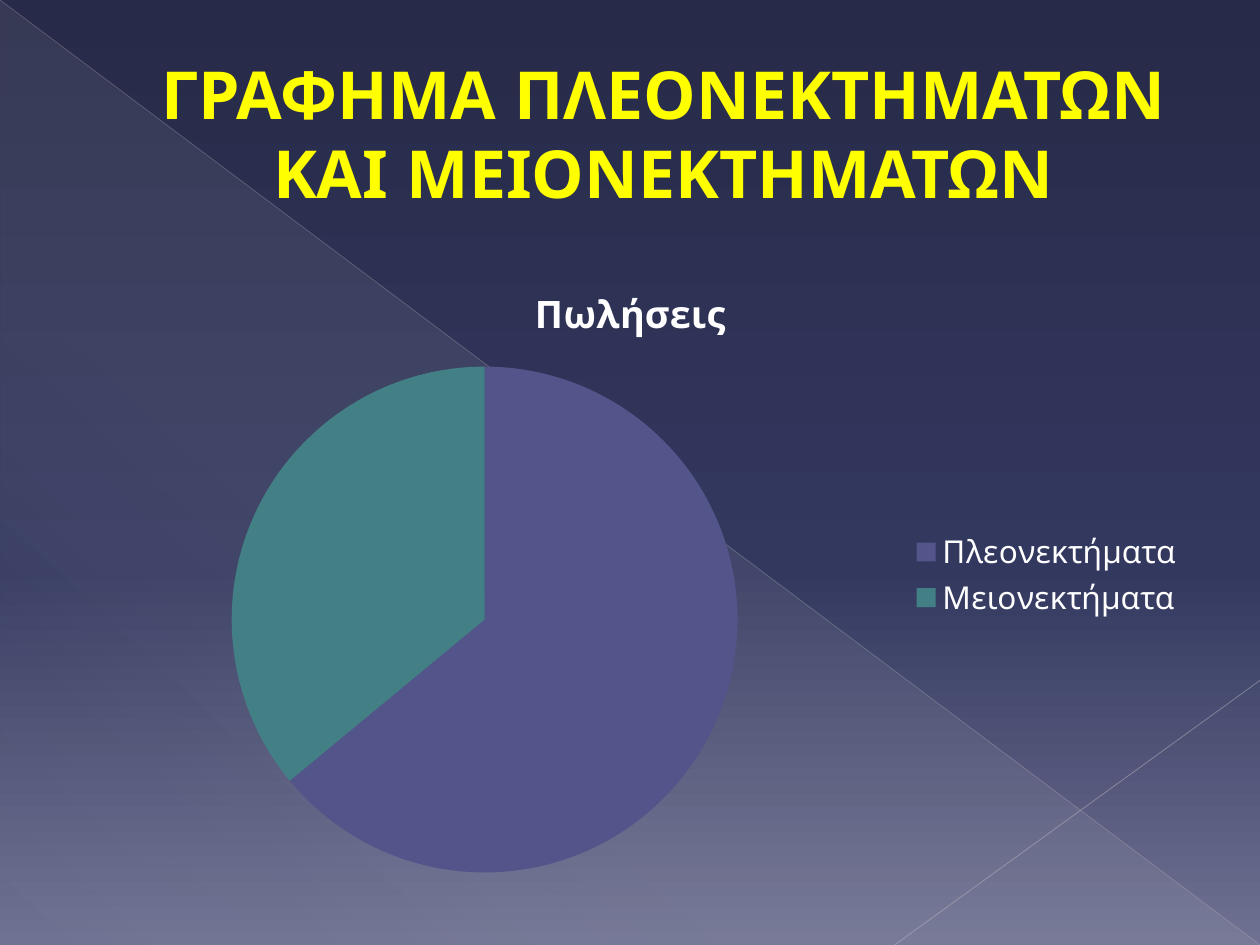
from dataclasses import dataclass

import lxml.etree
import pptx
import pptx.chart.data
import pptx.dml.color
import pptx.enum.chart
import pptx.enum.shapes
import pptx.enum.text
import pptx.oxml
import pptx.oxml.ns
import pptx.util

RGBColor = pptx.dml.color.RGBColor
WIDTH, HEIGHT = pptx.util.Inches(10), pptx.util.Inches(7.5)
FONT = "Quicksand"

NIGHT = RGBColor(0x27, 0x2A, 0x48)
INDIGO = RGBColor(0x33, 0x38, 0x5F)
HAZE = RGBColor(0x6E, 0x71, 0x91)
MIST = RGBColor(0xDE, 0xDE, 0xDE)
LONG_RAY = RGBColor(0xB7, 0xB7, 0xBE)
SHORT_RAY = RGBColor(0xBF, 0xBF, 0xC5)
YELLOW = RGBColor(0xFF, 0xFF, 0x00)
OUTLINE = RGBColor(0x3A, 0x3A, 0x60)
WHITE = RGBColor(0xFF, 0xFF, 0xFF)
PURPLE = RGBColor(0x53, 0x54, 0x8A)
TEAL = RGBColor(0x43, 0x80, 0x86)


@dataclass(frozen=True)
class Stop:
    position: int
    color: RGBColor
    opacity: int = 100


@dataclass(frozen=True)
class Ray:
    """A thin line; its ends are shares of the slide's size."""
    start: tuple[float, float]
    end: tuple[float, float]
    color: RGBColor
    points: float
    opacity: int


@dataclass(frozen=True)
class Slice:
    label: str
    value: int
    color: RGBColor


RAYS = (
    Ray((0, 0), (1, 1), LONG_RAY, 0.39, 35),
    Ray((1, 0.72), (0.71, 1), SHORT_RAY, 0.47, 45),
)
SLICES = (Slice("Πλεονεκτήματα", 64, PURPLE), Slice("Μειονεκτήματα", 36, TEAL))


def share(x: float, y: float) -> tuple[int, int]:
    return int(WIDTH * x), int(HEIGHT * y)


def set_opacity(color_node, percent: int) -> None:
    alpha = lxml.etree.SubElement(color_node, pptx.oxml.ns.qn("a:alpha"))
    alpha.set("val", str(percent * 1000))


def apply_gradient(solid_fill, stops: tuple[Stop, ...], angle: int) -> None:
    """Replace a solid fill element by a linear gradient."""
    marks = "".join(
        f'<a:gs pos="{stop.position * 1000}"><a:srgbClr val="{stop.color}">'
        f'<a:alpha val="{stop.opacity * 1000}"/></a:srgbClr></a:gs>'
        for stop in stops)
    gradient = pptx.oxml.parse_xml(
        f'<a:gradFill {pptx.oxml.ns.nsdecls("a")} rotWithShape="1">'
        f'<a:gsLst>{marks}</a:gsLst>'
        f'<a:lin ang="{angle * 60000}" scaled="0"/></a:gradFill>')
    solid_fill.getparent().replace(solid_fill, gradient)


def draw_backdrop(page) -> None:
    page.background.fill.solid()
    apply_gradient(page.element.xpath(".//p:bgPr/a:solidFill")[0],
                   (Stop(0, NIGHT), Stop(60, INDIGO), Stop(100, HAZE)), 90)
    triangle = page.shapes.add_shape(
        pptx.enum.shapes.MSO_SHAPE.RIGHT_TRIANGLE, 0, 0, WIDTH, HEIGHT)
    triangle.shadow.inherit = False
    triangle.line.fill.background()
    triangle.fill.solid()
    apply_gradient(triangle.element.xpath("./p:spPr/a:solidFill")[0],
                   (Stop(0, MIST, 10), Stop(70, MIST, 8), Stop(100, MIST, 1)), 133)


def draw_ray(page, ray: Ray) -> None:
    line = page.shapes.add_connector(
        pptx.enum.shapes.MSO_CONNECTOR.STRAIGHT, *share(*ray.start), *share(*ray.end))
    line.line.color.rgb = ray.color
    line.line.width = pptx.util.Pt(ray.points)
    set_opacity(line.element.xpath(".//a:ln//a:srgbClr")[0], ray.opacity)
    properties = line.element.xpath("./p:spPr")[0]
    lxml.etree.SubElement(properties, pptx.oxml.ns.qn("a:effectLst"))


def style_font(font, points: float, color: RGBColor, bold: bool = False) -> None:
    font.name = FONT
    font.size = pptx.util.Pt(points)
    font.bold = bold
    font.color.rgb = color


def draw_heading(page, text: str) -> None:
    box = page.shapes.add_textbox(*share(0.05, 0.04), *share(0.9, 0.2))
    frame = box.text_frame
    frame.word_wrap = True
    frame.vertical_anchor = pptx.enum.text.MSO_ANCHOR.MIDDLE
    para = frame.paragraphs[0]
    para.alignment = pptx.enum.text.PP_ALIGN.CENTER
    margin = para._p.get_or_add_pPr()
    margin.set("marL", str(pptx.util.Inches(0.53)))
    margin.set("indent", "0")
    run = para.add_run()
    run.text = text
    style_font(run.font, 37.8, YELLOW, bold=True)
    # Thin outline around the letters
    run.font._element.insert(0, pptx.oxml.parse_xml(
        f'<a:ln {pptx.oxml.ns.nsdecls("a")} w="{pptx.util.Pt(0.5)}">'
        f'<a:solidFill><a:srgbClr val="{OUTLINE}"/></a:solidFill></a:ln>'))


def draw_pie(page, title: str, slices: tuple[Slice, ...]) -> None:
    data = pptx.chart.data.CategoryChartData()
    data.categories = [part.label for part in slices]
    data.add_series(title, [part.value for part in slices])
    chart = page.shapes.add_chart(
        pptx.enum.chart.XL_CHART_TYPE.PIE,
        *share(0.05, 0.275), *share(0.9, 2 / 3), data).chart
    style_font(chart.font, 18, WHITE)

    chart.has_title = True
    run = chart.chart_title.text_frame.paragraphs[0].add_run()
    run.text = title
    style_font(run.font, 21.6, WHITE, bold=True)
    chart.chart_title.include_in_layout = False

    chart.has_legend = True
    chart.legend.position = pptx.enum.chart.XL_LEGEND_POSITION.RIGHT
    chart.legend.include_in_layout = False
    style_font(chart.legend.font, 18, WHITE)

    plot = chart.plots[0]
    plot.vary_by_categories = True
    for index, part in enumerate(slices):
        look = plot.series[0].points[index].format
        look.fill.solid()
        look.fill.fore_color.rgb = part.color
        look.line.fill.background()


def main() -> None:
    deck = pptx.Presentation()
    deck.slide_width, deck.slide_height = WIDTH, HEIGHT
    page = deck.slides.add_slide(deck.slide_layouts[6])
    draw_backdrop(page)
    for ray in RAYS:
        draw_ray(page, ray)
    draw_heading(page, "ΓΡΑΦΗΜΑ ΠΛΕΟΝΕΚΤΗΜΑΤΩΝ ΚΑΙ ΜΕΙΟΝΕΚΤΗΜΑΤΩΝ")
    draw_pie(page, "Πωλήσεις", SLICES)
    deck.save("out.pptx")


if __name__ == "__main__":
    main()
